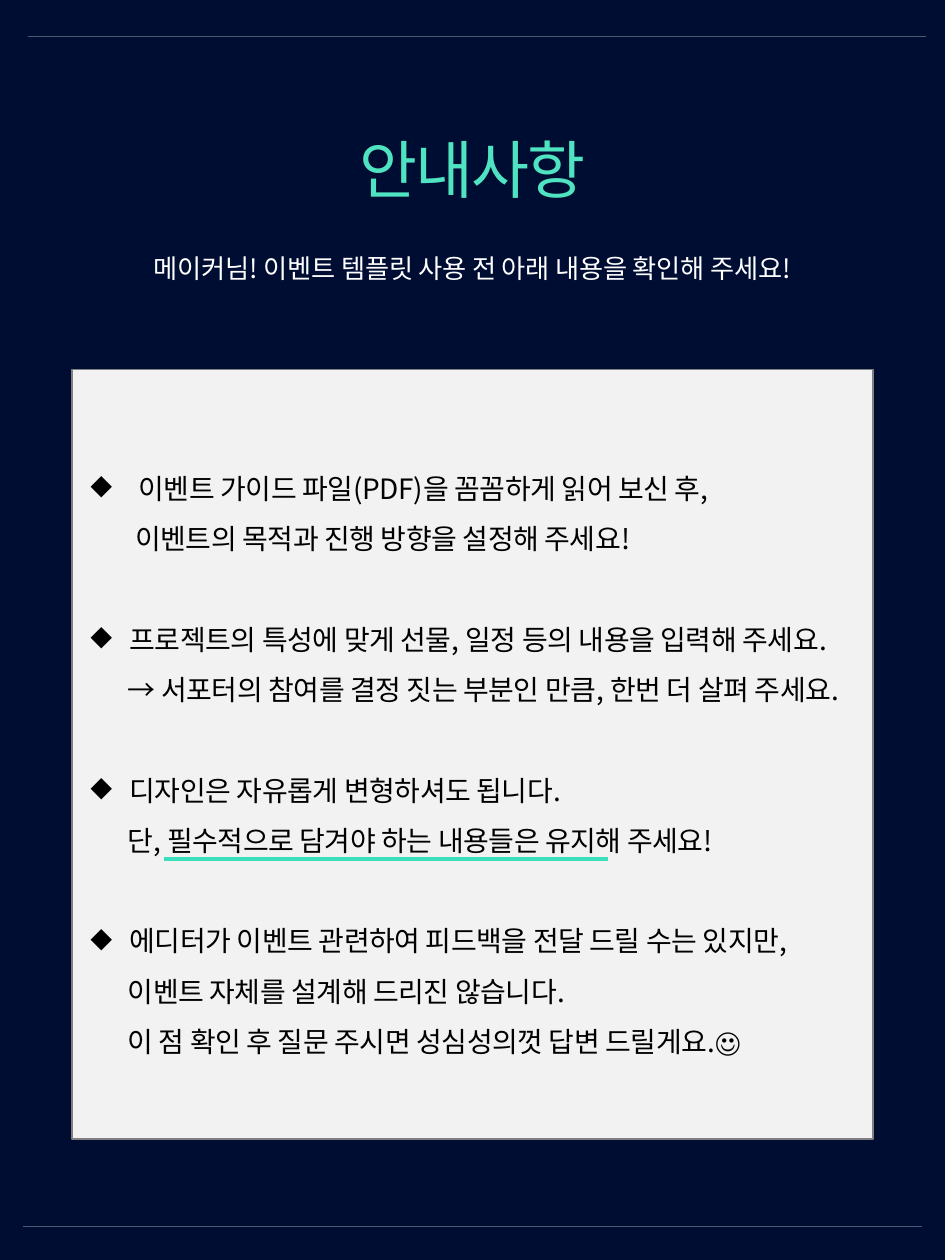
import pptx
import pptx.util
import pptx.dml.color
import pptx.enum.shapes
import pptx.enum.text
from lxml import etree

Pt = pptx.util.Pt
RGB = pptx.dml.color.RGBColor
ALIGN = pptx.enum.text.PP_ALIGN
NS = "{http://schemas.openxmlformats.org/drawingml/2006/main}"

NAVY = RGB(0x00, 0x0D, 0x33)
MINT = RGB(0x50, 0xE3, 0xC2)
UNDERLINE = RGB(0x39, 0xDF, 0xBB)
RULE = RGB(0x49, 0x5A, 0x73)
PANEL = RGB(0xF2, 0xF2, 0xF2)
GRAY = RGB(0x80, 0x80, 0x80)
WHITE = RGB(0xFF, 0xFF, 0xFF)
BLACK = RGB(0x00, 0x00, 0x00)


class Notice:
    font = "Noto Sans CJK KR"

    def __init__(self, slide):
        self.s = slide

    def rule(self, x1, x2, y, color, width):
        kind = pptx.enum.shapes.MSO_CONNECTOR.STRAIGHT
        sp = self.s.shapes.add_connector(kind, Pt(x1), Pt(y), Pt(x2), Pt(y))
        sp.line.color.rgb = color
        sp.line.width = Pt(width)
        etree.SubElement(sp._element.spPr, NS + "effectLst")

    def panel(self, x, y, w, h):
        kind = pptx.enum.shapes.MSO_SHAPE.RECTANGLE
        sp = self.s.shapes.add_shape(kind, Pt(x), Pt(y), Pt(w), Pt(h))
        sp.shadow.inherit = False
        sp.fill.solid()
        sp.fill.fore_color.rgb = PANEL
        sp.line.color.rgb = GRAY
        sp.line.width = Pt(1)

    def box(self, x, y, w, h, wrap=True):
        tf = self.s.shapes.add_textbox(Pt(x), Pt(y), Pt(w), Pt(h)).text_frame
        tf.word_wrap = wrap
        tf.vertical_anchor = pptx.enum.text.MSO_ANCHOR.MIDDLE
        tf.margin_left = tf.margin_right = Pt(0.72)
        tf.margin_top = tf.margin_bottom = Pt(0.72)
        return tf

    def text(self, p, text, size, color, tracking, align=ALIGN.LEFT, leading=None):
        p.alignment = align
        if leading:
            p.line_spacing = Pt(leading)
        r = p.add_run()
        r.text = text
        r.font.size = Pt(size)
        r.font.name = self.font
        r.font.color.rgb = color
        rPr = r.font._element
        rPr.set("spc", str(round(tracking * 100)))
        rPr.find(NS + "latin").addnext(
            etree.Element(NS + "ea", typeface=self.font))

    def items(self, tf, items, size, leading):
        p = tf.paragraphs[0]
        for i, (indent, hanging, lines) in enumerate(items):
            for j, line in enumerate(lines):
                if i or j:
                    p = tf.add_paragraph()
                pPr = p._p.get_or_add_pPr()
                if j == 0:
                    pPr.set("marL", str(Pt(indent)))
                    pPr.set("indent", str(-Pt(indent)))
                    etree.SubElement(pPr, NS + "buChar", char="◆")
                    if i:
                        p.space_before = Pt(leading)
                else:
                    pPr.set("marL", str(Pt(hanging)))
                    pPr.set("indent", "0")
                self.text(p, line, size, BLACK, -0.2, leading=leading)


# Each item: bullet indent, indent of the following lines, lines
ITEMS = [
    (27.4, 25.5, ["이벤트 가이드 파일(PDF)을 꼼꼼하게 읽어 보신 후,",
                  "이벤트의 목적과 진행 방향을 설정해 주세요!"]),
    (22.3, 21.2, ["프로젝트의 특성에 맞게 선물, 일정 등의 내용을 입력해 주세요.",
                  "→ 서포터의 참여를 결정 짓는 부분인 만큼, 한번 더 살펴 주세요."]),
    (22.3, 21.2, ["디자인은 자유롭게 변형하셔도 됩니다.",
                  "단, 필수적으로 담겨야 하는 내용들은 유지해 주세요!"]),
    (22.3, 21.2, ["에디터가 이벤트 관련하여 피드백을 전달 드릴 수는 있지만,",
                  "이벤트 자체를 설계해 드리진 않습니다.",
                  "이 점 확인 후 질문 주시면 성심성의껏 답변 드릴게요.☺"]),
]


def main():
    prs = pptx.Presentation()
    prs.slide_width, prs.slide_height = Pt(540), Pt(720)
    s = prs.slides.add_slide(prs.slide_layouts[6])
    s.background.fill.solid()
    s.background.fill.fore_color.rgb = NAVY
    notice = Notice(s)

    # Heading
    tf = notice.box(44.6, 137, 450.7, 25.2)
    notice.text(tf.paragraphs[0], "메이커님! 이벤트 템플릿 사용 전 아래 내용을 확인해 주세요!",
                15, WHITE, -0.1, ALIGN.CENTER, 25)
    tf = notice.box(198, 70.7, 144, 51.1, wrap=False)
    notice.text(tf.paragraphs[0], "안내사항", 36, MINT, -1.1, ALIGN.CENTER)

    # Top and bottom rules
    notice.rule(15.8, 529.2, 20.6, RULE, 0.25)
    notice.rule(13, 527, 700.6, RULE, 0.25)

    # Panel with the notices
    notice.panel(41, 211.2, 458, 439.7)
    notice.items(notice.box(51.1, 258.7, 457.9, 347), ITEMS, 16, 28.75)
    notice.rule(93.6, 347.6, 490.9, UNDERLINE, 2.25)

    prs.save("out.pptx")


if __name__ == "__main__":
    main()
